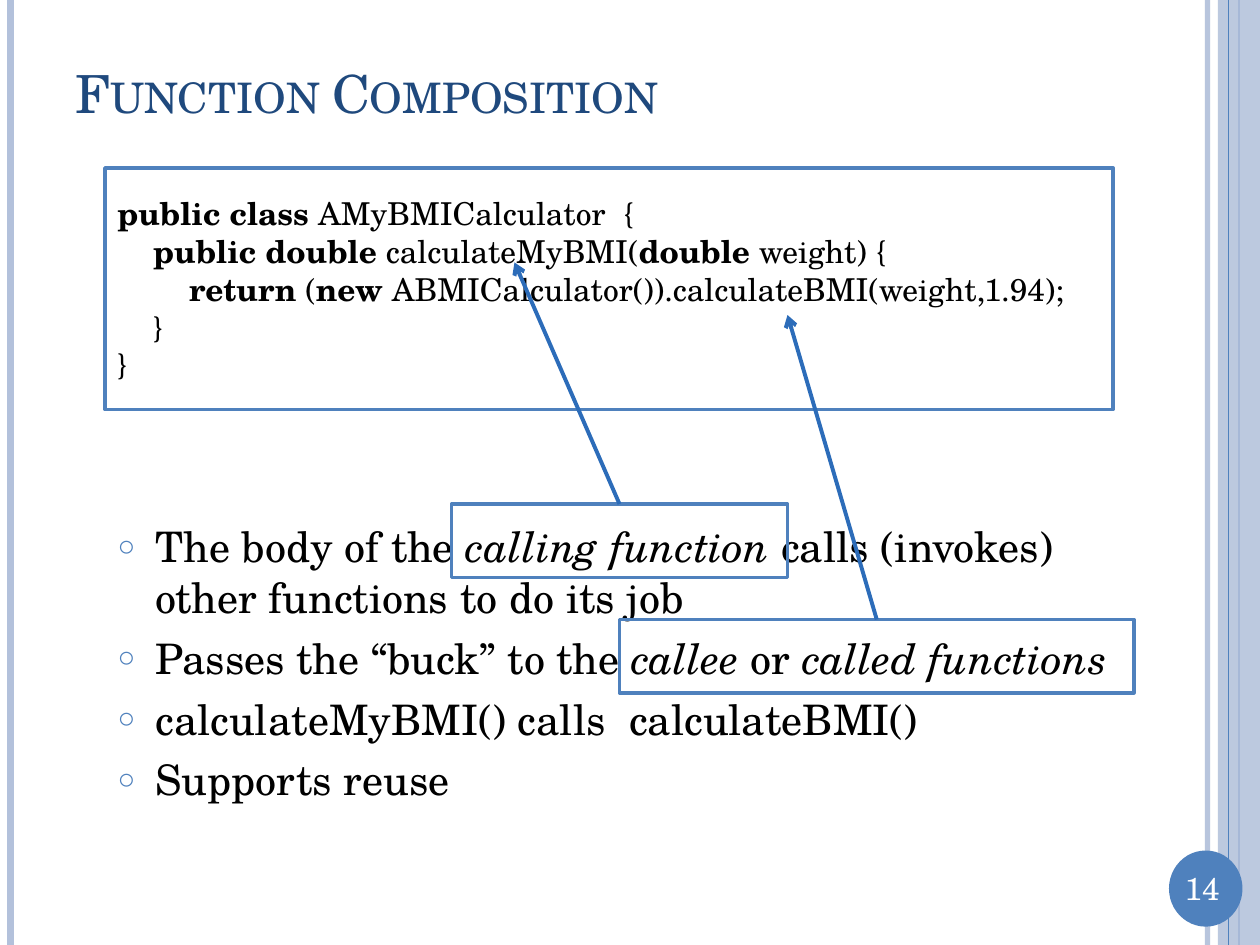
from dataclasses import dataclass

from lxml.etree import SubElement
from pptx import Presentation
from pptx.dml.color import RGBColor
from pptx.enum.shapes import MSO_CONNECTOR, MSO_SHAPE
from pptx.enum.text import MSO_ANCHOR, MSO_AUTO_SIZE, PP_ALIGN
from pptx.oxml.ns import qn
from pptx.util import Pt


@dataclass(frozen=True)
class Theme:
    font: str = "TeX Gyre Schola"
    accent: str = "4F81BD"
    pale: str = "B3C1DB"
    arrow: str = "2C6CB9"
    heading: str = "1F497D"
    ink: str = "000000"
    paper: str = "FFFFFF"
    title_size: int = 30
    body_size: int = 24
    code_size: int = 18
    number_size: int = 18
    frame_width: float = 2
    arrow_width: float = 2.25
    code_indent: float = 20.5
    bullet_indent: float = 21.6


THEME = Theme()

# Each line of code: indent level, then (text, format) pieces.
BOLD, ITALIC, PLAIN = {"bold": True}, {"italic": True}, {}
CODE = [
    (0, [("public class ", BOLD), ("AMyBMICalculator  {", PLAIN)]),
    (1, [("public double ", BOLD), ("calculateMyBMI(", PLAIN),
         ("double", BOLD), (" weight) {", PLAIN)]),
    (2, [("return", BOLD), (" (", PLAIN), ("new ", BOLD),
         ("ABMICalculator()).calculateBMI(weight,1.94);", PLAIN)]),
    (1, [("}", PLAIN)]),
    (0, [("}", PLAIN)]),
]
POINTS = [
    [("The body of the ", PLAIN), ("calling function", ITALIC),
     (" calls (invokes) other functions to do its job", PLAIN)],
    [("Passes the “buck” to the ", PLAIN), ("callee", ITALIC),
     (" or ", PLAIN), ("called functions", ITALIC)],
    [("calculateMyBMI() calls  calculateBMI()", PLAIN)],
    [("Supports reuse", PLAIN)],
]


def rgb(color):
    return RGBColor.from_string(color)


def set_opacity(shape, percent):
    for color in shape._element.iter(qn("a:srgbClr")):
        SubElement(color, qn("a:alpha")).set("val", str(percent * 1000))


def place(shape, left, top, width, height):
    bounds = {"left": left, "top": top, "width": width, "height": height}
    for name, value in bounds.items():
        setattr(shape, name, Pt(value))


def add_runs(paragraph, pieces, size, color):
    for text, extra in pieces:
        run = paragraph.add_run()
        run.text = text
        style = {"name": THEME.font, "size": Pt(size), **extra}
        for name, value in style.items():
            setattr(run.font, name, value)
        run.font.color.rgb = rgb(color)


def set_frame(frame, anchor):
    settings = {"word_wrap": True, "auto_size": MSO_AUTO_SIZE.NONE,
                "vertical_anchor": anchor}
    for name, value in settings.items():
        setattr(frame, name, value)


def paragraphs(frame, count):
    """Return the frame's first paragraph and enough new ones after it."""
    return [frame.paragraphs[0]] + [frame.add_paragraph() for _ in range(count - 1)]


def add_panel(slide, kind, bounds, fill=None, outline=None):
    panel = slide.shapes.add_shape(kind, *map(Pt, bounds))
    panel.shadow.inherit = False
    if fill:
        panel.fill.solid()
        panel.fill.fore_color.rgb = rgb(fill)
    else:
        panel.fill.background()
    if outline:
        panel.line.color.rgb = rgb(outline)
        panel.line.width = Pt(THEME.frame_width)
    else:
        panel.line.fill.background()
    return panel


def add_line(slide, start, end, color, width):
    line = slide.shapes.add_connector(
        MSO_CONNECTOR.STRAIGHT, *map(Pt, (*start, *end)))
    line.line.color.rgb = rgb(color)
    line.line.width = Pt(width)
    SubElement(line._element.spPr, qn("a:effectLst"))
    return line


def add_arrow(slide, start, end):
    arrow = add_line(slide, start, end, THEME.arrow, THEME.arrow_width)
    SubElement(arrow.line._get_or_add_ln(), qn("a:tailEnd")).set("type", "arrow")


def add_stripe(slide, x, color, width):
    return add_line(slide, (x, 0), (x, 540), color, width)


def add_margins(slide):
    set_opacity(add_stripe(slide, 690, THEME.pale, 3), 93)
    add_stripe(slide, 6, THEME.pale, 4.5)
    add_stripe(slide, 708, THEME.accent, 1.5)
    band = add_panel(slide, MSO_SHAPE.RECTANGLE, (696, 0, 24, 540), THEME.pale)
    set_opacity(band, 87)
    add_stripe(slide, 702, THEME.accent, 0.75)


def add_page_number(slide, number):
    add_panel(slide, MSO_SHAPE.OVAL, (668, 486, 42, 43.5), THEME.accent)
    label = slide.shapes.add_textbox(*map(Pt, (666, 493, 42, 29)))
    set_frame(label.text_frame, MSO_ANCHOR.TOP)
    paragraph = label.text_frame.paragraphs[0]
    paragraph.alignment = PP_ALIGN.CENTER
    add_runs(paragraph, [(number, PLAIN)], THEME.number_size, THEME.paper)


def fill_title(title, text):
    place(title, 36, 21.6, 624, 62.4)
    set_frame(title.text_frame, MSO_ANCHOR.MIDDLE)
    paragraph = title.text_frame.paragraphs[0]
    paragraph.alignment = PP_ALIGN.LEFT
    add_runs(paragraph, [(text, PLAIN)], THEME.title_size, THEME.heading)
    paragraph.runs[0].font._element.set("cap", "small")


def add_code(slide, bounds):
    panel = add_panel(slide, MSO_SHAPE.RECTANGLE, bounds, THEME.paper, THEME.accent)
    set_frame(panel.text_frame, MSO_ANCHOR.MIDDLE)
    lines = paragraphs(panel.text_frame, len(CODE))
    for paragraph, (level, pieces) in zip(lines, CODE):
        paragraph.alignment = PP_ALIGN.LEFT
        paragraph._p.get_or_add_pPr().set("marL", str(Pt(level * THEME.code_indent)))
        add_runs(paragraph, pieces, THEME.code_size, THEME.ink)


def add_bullet(paragraph):
    properties = paragraph._p.get_or_add_pPr()
    indent = Pt(THEME.bullet_indent)
    properties.set("marL", str(indent))
    properties.set("indent", str(-indent))
    color = SubElement(properties, qn("a:buClr"))
    SubElement(color, qn("a:srgbClr")).set("val", THEME.accent)
    SubElement(properties, qn("a:buSzPct")).set("val", "70000")
    SubElement(properties, qn("a:buChar")).set("char", "○")


def fill_points(body):
    place(body, 60, 294, 600, 216)
    set_frame(body.text_frame, MSO_ANCHOR.TOP)
    for paragraph, pieces in zip(paragraphs(body.text_frame, len(POINTS)), POINTS):
        paragraph.space_before = Pt(6)
        add_bullet(paragraph)
        add_runs(paragraph, pieces, THEME.body_size, THEME.ink)


def add_callout(slide, bounds, start, end):
    """Frame a term in the list and point from it to the code."""
    add_panel(slide, MSO_SHAPE.RECTANGLE, bounds, outline=THEME.accent)
    add_arrow(slide, start, end)


def main():
    deck = Presentation()
    deck.slide_width, deck.slide_height = Pt(720), Pt(540)
    slide = deck.slides.add_slide(deck.slide_layouts[1])
    title, body = slide.placeholders
    add_margins(slide)
    add_page_number(slide, "14")
    fill_title(title, "Function Composition")
    add_code(slide, (60, 96, 576, 138))
    fill_points(body)
    add_callout(slide, (258, 288, 192, 42), (354, 288), (294, 150))
    add_callout(slide, (354, 354, 294, 42), (501, 354), (450, 180))
    deck.save("out.pptx")


if __name__ == "__main__":
    main()
